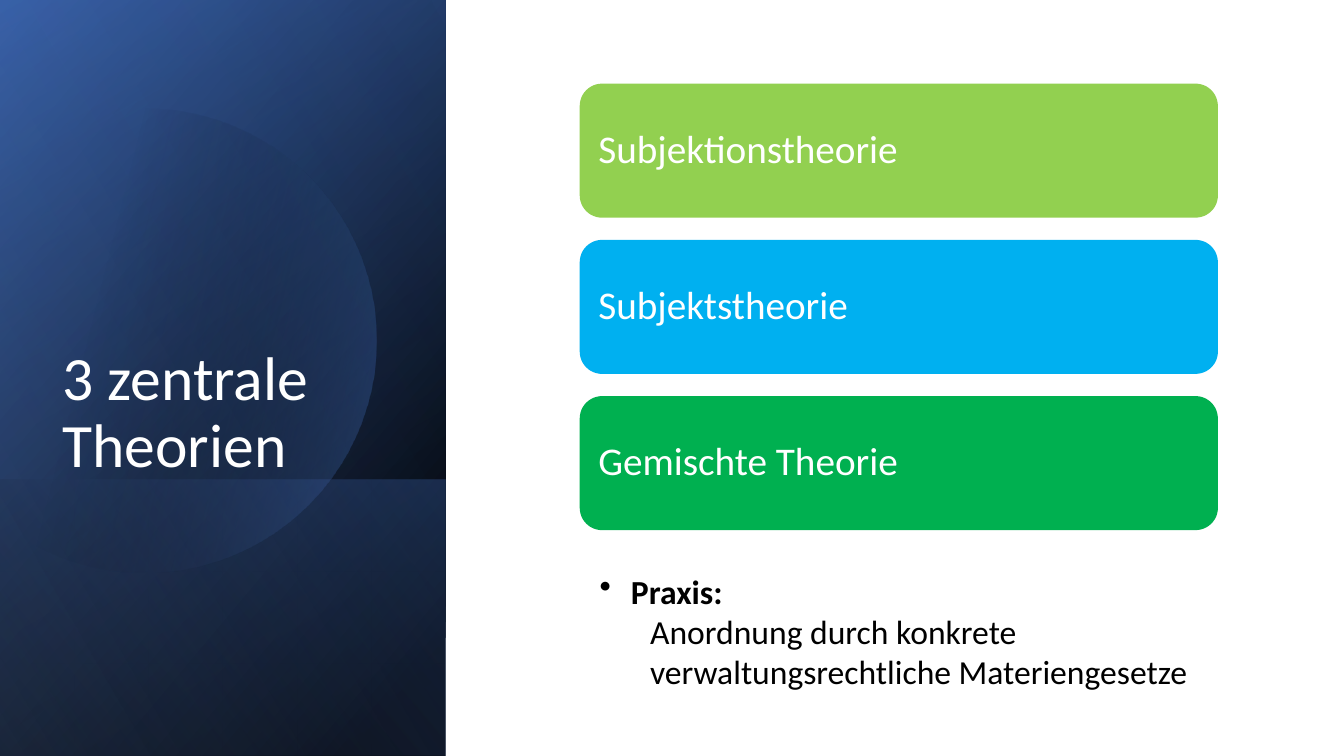
import math
import pptx
import pptx.util
import pptx.dml.color
import pptx.enum.shapes
import pptx.enum.text
import pptx.oxml
import pptx.oxml.ns
from pptx.util import Inches

SHAPES = pptx.enum.shapes.MSO_SHAPE
ANCHOR = pptx.enum.text.MSO_ANCHOR


def color(code):
    return pptx.dml.color.RGBColor.from_string(code)


def write(para, text, size, code, bold=False, spacing=1.0):
    para.alignment = pptx.enum.text.PP_ALIGN.LEFT
    para.line_spacing = spacing
    span = para.add_run()
    span.text = text
    span.font.name = "Calibri"
    span.font.size = pptx.util.Pt(size)
    span.font.bold = bold
    span.font.color.rgb = color(code)


deck = pptx.Presentation()
deck.slide_width, deck.slide_height = Inches(13.33), Inches(7.5)
page = deck.slides.add_slide(deck.slide_layouts[5])
shapes = page.shapes

# Side panel: layered gradients, with a disc cut off at the slide edge
PANEL_WIDTH, STRIP_TOP = 4.42, 4.76
CENTER_X, CENTER_Y, RADIUS = 1.43, 3.38, 2.3


def add_panel(top):
    return shapes.add_shape(SHAPES.RECTANGLE, 0, Inches(top),
                            Inches(PANEL_WIDTH), Inches(7.5 - top))


base, glow, strip = add_panel(0), add_panel(0), add_panel(STRIP_TOP)
points = []
for degrees in range(-128, 129, 4):
    angle = math.radians(degrees)
    points.append((Inches(max(0, CENTER_X + RADIUS * math.cos(angle))),
                   Inches(CENTER_Y + RADIUS * math.sin(angle))))
outline = shapes.build_freeform(*points[0])
outline.add_line_segments(points[1:], close=True)
disc = outline.convert_to_shape()
veil = add_panel(0)

# Clockwise angle, then position, colour and opacity (all in percent) of each stop
gradients = [
    (base, 220, [(8, "000000", 100), (100, "2F5597", 100)]),
    (glow, 240, [(0, "000000", 0), (99, "4472C4", 46)]),
    (strip, 140, [(2, "4472C4", 29), (100, "000000", 30)]),
    (disc, 14, [(29, "000000", 0), (100, "4472C4", 43)]),
    (veil, 150, [(0, "000000", 0), (99, "8FAADC", 11)]),
]
for shape, clockwise, stops in gradients:
    shape.shadow.inherit = False
    shape.line.fill.background()
    shape.fill.gradient()
    shape.fill.gradient_angle = 360 - clockwise
    for stop, (position, code, opacity) in zip(shape.fill.gradient_stops, stops):
        stop.position = position / 100
        stop.color.rgb = color(code)
    for node, (position, code, opacity) in zip(
            shape.element.spPr.iter(pptx.oxml.ns.qn("a:srgbClr")), stops):
        alpha = pptx.oxml.parse_xml(
            f'<a:alpha {pptx.oxml.ns.nsdecls("a")} val="{opacity * 1000}"/>')
        node.append(alpha)

# Title, moved in front of the panel
title = shapes.title
title.left, title.top = Inches(0.52), Inches(2.2)
title.width, title.height = Inches(3.2), Inches(2.62)
title.text_frame.word_wrap = True
title.text_frame.auto_size = pptx.enum.text.MSO_AUTO_SIZE.NONE
title.text_frame.vertical_anchor = ANCHOR.BOTTOM
write(title.text_frame.paragraphs[0], "3 zentrale Theorien", 44, "FFFFFF", spacing=0.9)
veil.element.addnext(title.element)

# Theory cards
theories = [("Subjektionstheorie", "92D050"), ("Subjektstheorie", "00B0F0"),
            ("Gemischte Theorie", "00B050")]
for index, (theory, code) in enumerate(theories):
    card = shapes.add_shape(SHAPES.ROUNDED_RECTANGLE, Inches(5.75),
                            Inches(0.83 + 1.55 * index), Inches(6.33), Inches(1.33))
    card.shadow.inherit = False
    card.fill.solid()
    card.fill.fore_color.rgb = color(code)
    card.line.fill.background()
    frame = card.text_frame
    frame.word_wrap = True
    frame.vertical_anchor = ANCHOR.MIDDLE
    frame.margin_left = Inches(0.12)
    write(frame.paragraphs[0], theory, 28, "FFFFFF", spacing=0.9)

# Practice note
note = shapes.add_textbox(Inches(5.85), Inches(5.61), Inches(6.14), Inches(1.31))
note.text_frame.word_wrap = True
heading = note.text_frame.paragraphs[0]
write(heading, "Praxis:", 24, "000000", bold=True)
detail = note.text_frame.add_paragraph()
detail.level = 1
write(detail, "Anordnung durch konkrete verwaltungsrechtliche Materiengesetze", 24, "000000")
for para, margin, indent in [(heading, 0.31, -0.31), (detail, 0.5, 0)]:
    properties = para._p.get_or_add_pPr()
    properties.set("marL", str(Inches(margin)))
    properties.set("indent", str(Inches(indent)))
bullet = pptx.oxml.parse_xml(f'<a:buChar {pptx.oxml.ns.nsdecls("a")} char="•"/>')
heading._p.get_or_add_pPr().append(bullet)

deck.save("out.pptx")
